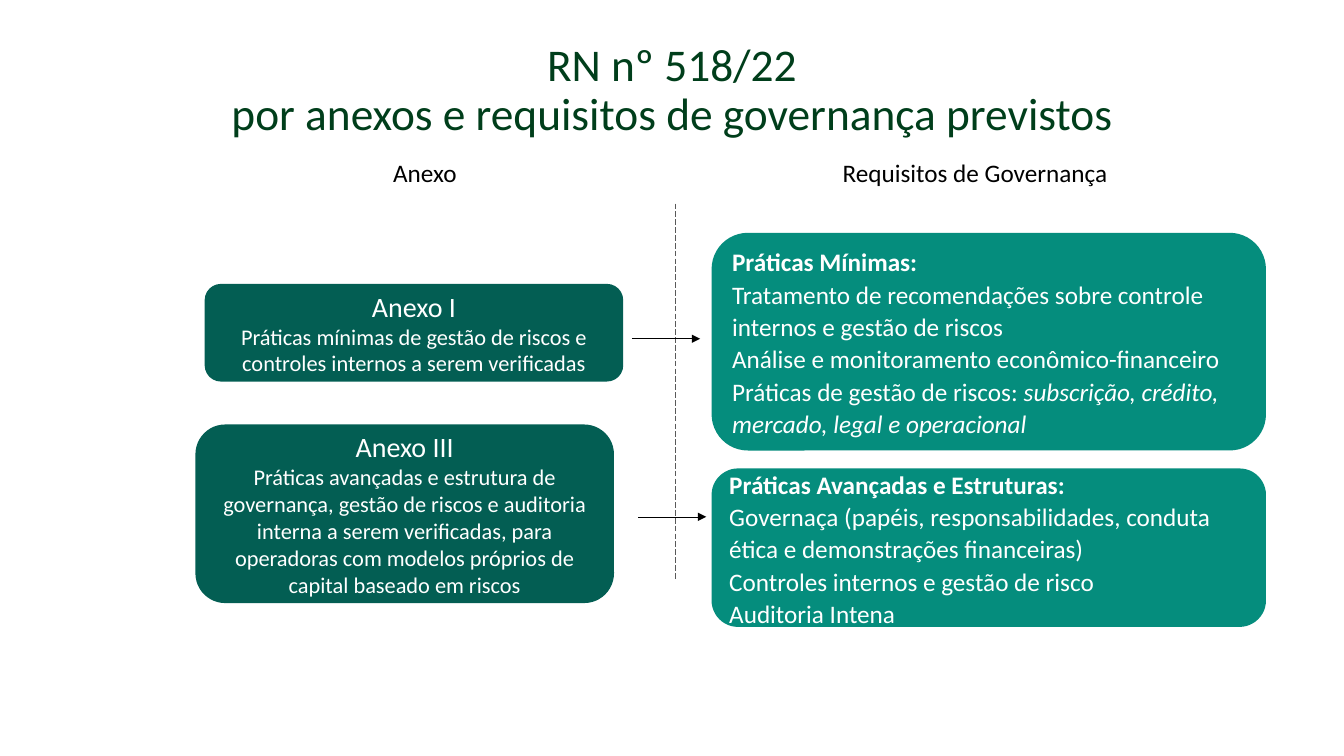
"""Build the slide on RN nº 518/22 annexes and governance requirements."""
from lxml import etree
from pptx import Presentation
from pptx.dml.color import RGBColor
from pptx.enum.dml import MSO_LINE
from pptx.enum.shapes import MSO_CONNECTOR, MSO_SHAPE
from pptx.enum.text import MSO_ANCHOR, MSO_AUTO_SIZE, PP_ALIGN
from pptx.oxml.ns import qn
from pptx.util import Pt

STRAIGHT = MSO_CONNECTOR.STRAIGHT
ROUNDED = MSO_SHAPE.ROUNDED_RECTANGLE
LONG_DASH = MSO_LINE.LONG_DASH
MIDDLE, BOTTOM = MSO_ANCHOR.MIDDLE, MSO_ANCHOR.BOTTOM
CENTER, LEFT = PP_ALIGN.CENTER, PP_ALIGN.LEFT

FONT = "Calibri"
COLORS = {"title": "003E1B", "annex": "035E53", "practice": "058D7D",
          "white": "FFFFFF", "black": "000000", "divider": "595959"}

SLIDE_WIDTH, SLIDE_HEIGHT = 960, 540
TITLE = ["RN nº 518/22", "por anexos e requisitos de governança previstos"]
HEADINGS = [("Anexo", 303.5), ("Requisitos de Governança", 696.5)]
HEADING_TOP, HEADING_WIDTH, HEADING_HEIGHT = 108.9, 260, 29
ANNEX_WIDTH = 299
ANNEXES = [
    (146.2, 202.8, 69.8, "Anexo I",
     "Práticas mínimas de gestão de riscos e controles internos a serem verificadas"),
    (139.6, 303.2, 127.6, "Anexo III",
     "Práticas avançadas e estrutura de governança, gestão de riscos e auditoria interna "
     "a serem verificadas, para operadoras com modelos próprios de capital baseado em riscos"),
]
PRACTICE_LEFT, PRACTICE_WIDTH = 508.3, 396
PRACTICES = [
    (166.3, 155.5, "Práticas Mínimas:", [
        ("Tratamento de recomendações sobre controle internos e gestão de riscos", ""),
        ("Análise e monitoramento econômico-financeiro", ""),
        ("Práticas de gestão de riscos: ", "subscrição, crédito, mercado, legal e operacional")]),
    (334.6, 113.2, "Práticas Avançadas e Estruturas:", [
        ("Governaça (papéis, responsabilidades, conduta ética e demonstrações financeiras)", ""),
        ("Controles internos e gestão de risco", ""),
        ("Auditoria Intena", "")]),
]
DIVIDER_X, DIVIDER_TOP, DIVIDER_BOTTOM = 482.4, 145.4, 413.3
ARROWS = [(451.4, 242), (455.8, 369.2)]
ARROW_LENGTH = 48.7


def rgb(name):
    return RGBColor.from_string(COLORS[name])


def add_run(paragraph, text, size, color, bold=False, italic=False):
    run = paragraph.add_run()
    run.text = text
    font = run.font
    font.name, font.size, font.bold, font.italic = FONT, Pt(size), bold, italic
    font.color.rgb = rgb(color)


def fill_frame(frame, paragraphs, align, spacing=None):
    """Write paragraphs given as lists of (text, size, color, bold, italic) runs."""
    frame.word_wrap = True
    for index, runs in enumerate(paragraphs):
        paragraph = frame.add_paragraph() if index else frame.paragraphs[0]
        paragraph.alignment = align
        if spacing:
            paragraph.line_spacing = spacing
        for run in runs:
            add_run(paragraph, *run)


def add_card(slide, left, top, width, height, fill, paragraphs, align, spacing=None):
    card = slide.shapes.add_shape(ROUNDED, Pt(left), Pt(top), Pt(width), Pt(height))
    card.shadow.inherit = False
    card.fill.solid()
    card.fill.fore_color.rgb = rgb(fill)
    card.line.fill.background()
    card.text_frame.vertical_anchor = MIDDLE
    fill_frame(card.text_frame, paragraphs, align, spacing)


def add_line(slide, x1, y1, x2, y2, color, dash=None, arrow=False):
    connector = slide.shapes.add_connector(STRAIGHT, Pt(x1), Pt(y1), Pt(x2), Pt(y2))
    line = connector.line
    line.color.rgb = rgb(color)
    line.width = Pt(0.5)
    if dash:
        line.dash_style = dash
    properties = connector._element.spPr
    if arrow:
        etree.SubElement(properties.find(qn("a:ln")), qn("a:tailEnd"), type="triangle")
    etree.SubElement(properties, qn("a:effectLst"))


def add_title(slide):
    title = slide.shapes.title
    title.left, title.top, title.width, title.height = Pt(0), Pt(33.8), Pt(SLIDE_WIDTH), Pt(69.8)
    frame = title.text_frame
    frame.auto_size = MSO_AUTO_SIZE.NONE
    frame.vertical_anchor = BOTTOM
    frame.word_wrap = True
    paragraph = frame.paragraphs[0]
    paragraph.alignment = CENTER
    paragraph.line_spacing = 0.9
    for index, text in enumerate(TITLE):
        if index:
            paragraph.add_line_break()
        add_run(paragraph, text, 32.4, "title")


def main():
    deck = Presentation()
    deck.slide_width, deck.slide_height = Pt(SLIDE_WIDTH), Pt(SLIDE_HEIGHT)
    slide = deck.slides.add_slide(deck.slide_layouts[5])
    add_title(slide)

    for heading, center in HEADINGS:
        box = slide.shapes.add_textbox(Pt(center - HEADING_WIDTH / 2), Pt(HEADING_TOP),
                                       Pt(HEADING_WIDTH), Pt(HEADING_HEIGHT))
        fill_frame(box.text_frame, [[(heading, 18, "black")]], CENTER)

    for left, top, height, annex, summary in ANNEXES:
        add_card(slide, left, top, ANNEX_WIDTH, height, "annex",
                 [[(annex, 20, "white")], [(summary, 16, "white")]], CENTER)

    for top, height, heading, requirements in PRACTICES:
        paragraphs = [[(heading, 18, "white", True)]]
        for requirement, examples in requirements:
            runs = [(requirement, 18, "white")]
            if examples:
                runs.append((examples, 18, "white", False, True))
            paragraphs.append(runs)
        add_card(slide, PRACTICE_LEFT, top, PRACTICE_WIDTH, height, "practice",
                 paragraphs, LEFT, 1.07)

    add_line(slide, DIVIDER_X, DIVIDER_TOP, DIVIDER_X, DIVIDER_BOTTOM, "divider", LONG_DASH)
    for x, y in ARROWS:
        add_line(slide, x, y, x + ARROW_LENGTH, y, "black", arrow=True)

    deck.save("out.pptx")


if __name__ == "__main__":
    main()
